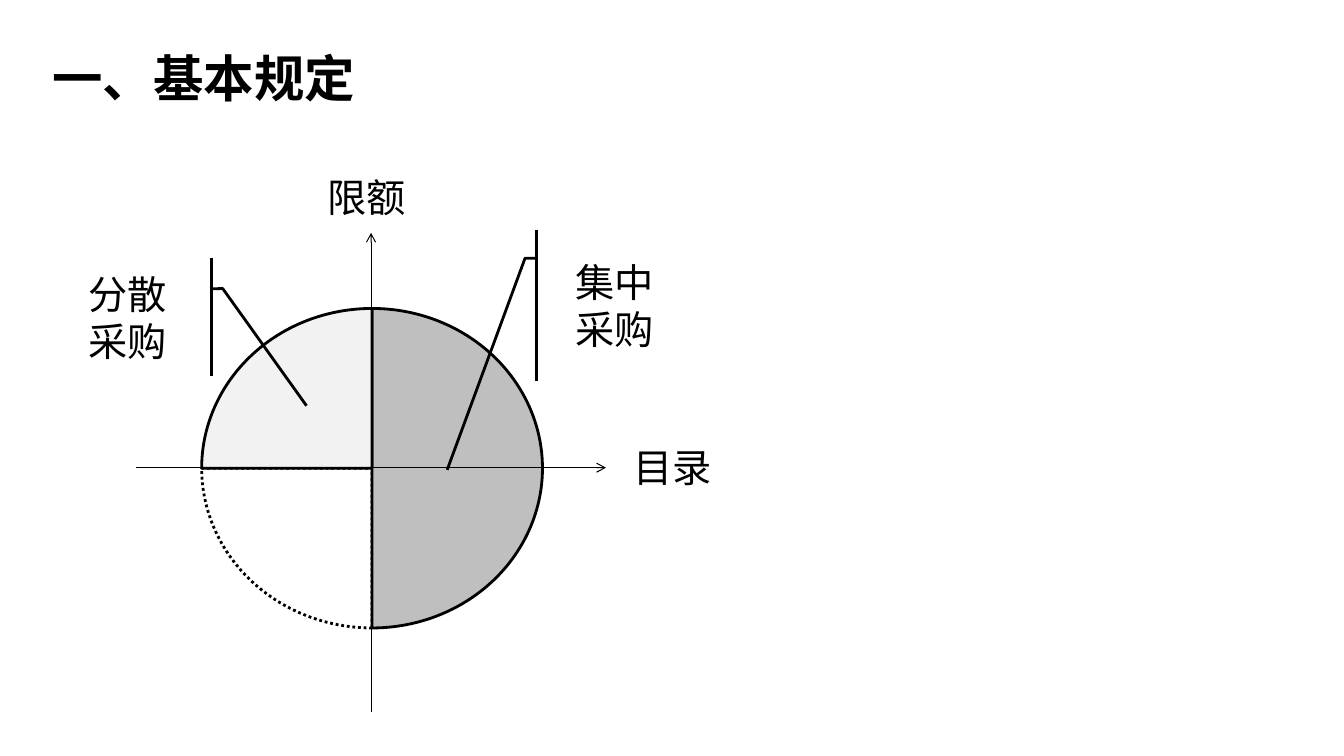
from lxml import etree
from pptx import Presentation
from pptx import util as u
from pptx.dml.color import RGBColor
from pptx.enum import dml, shapes, text
from pptx.oxml.ns import qn

FONT = "Noto Sans CJK SC"
BLACK = "000000"
TITLE = ("一、基本规定", (0.42, 0.42, 8.41, 1.1))
CIRCLE = (2, 3.06, 3.38, 3.17)
# start angle, end angle, fill, dash
LOWER = (270, 360, "FFFFFF", dml.MSO_LINE.ROUND_DOT)
RIGHT = (90, 270, "BFBFBF", None)
UPPER = (0, 90, "F2F2F2", None)
AXES = [(1.35, 4.64, 6.01, 4.64), (3.68, 7.06, 3.68, 2.31)]
LABELS = [("限额", (3.15, 1.67, 1.08, 0.57)), ("目录", (6.18, 4.35, 1.08, 0.57))]
NOTES = [
    ("集中采购", (5.43, 2.28, 1.33, 1.5), (0.188, -0.083, 0.188, -0.167, 1.588, -0.748)),
    ("分散采购", (0.6, 2.56, 1.33, 1.17), (0.262, 1.125, 0.259, 1.21, 1.253, 1.835)),
]


def color(code):
    return RGBColor.from_string(code)


def inches(box):
    return [u.Inches(v) for v in box]


def write(frame, words, size=28, bold=False, align=text.PP_ALIGN.LEFT,
          anchor=text.MSO_ANCHOR.TOP, wrap=True):
    frame.word_wrap = wrap
    frame.vertical_anchor = anchor
    para = frame.paragraphs[0]
    para.alignment = align
    run = para.add_run()
    run.text = words
    font = run.font
    font.size, font.bold, font.name = u.Pt(size), bold, FONT
    font.color.rgb = color(BLACK)
    etree.SubElement(run._r.get_or_add_rPr(), qn("a:ea"), typeface=FONT)


def draw(slide, kind, box, adjust, fill=None, dash=None):
    shape = slide.shapes.add_shape(kind, *inches(box))
    shape.shadow.inherit = False
    for i, value in enumerate(adjust):
        shape.adjustments[i] = value
    if fill:
        shape.fill.solid()
        shape.fill.fore_color.rgb = color(fill)
    else:
        shape.fill.background()
    shape.line.color.rgb = color(BLACK)
    shape.line.width = u.Pt(2)
    if dash:
        shape.line.dash_style = dash
    return shape


def sector(slide, start, end, fill, dash):
    # Angles are stored in 60000ths of a degree, adjustments in 100000ths
    adjust = (start * 0.6, min(end * 0.6, 215.999))
    draw(slide, shapes.MSO_SHAPE.PIE, CIRCLE, adjust, fill, dash).rotation = 180


def axis(slide, ends):
    line = slide.shapes.add_connector(shapes.MSO_CONNECTOR.STRAIGHT, *inches(ends))
    line.line.color.rgb = color(BLACK)
    line.line.width = u.Pt(0.75)
    etree.SubElement(line.line._get_or_add_ln(), qn("a:tailEnd"), type="arrow")
    etree.SubElement(line._element.spPr, qn("a:effectLst"))


def main():
    deck = Presentation()
    deck.slide_width, deck.slide_height = inches((13.33, 7.5))
    slide = deck.slides.add_slide(deck.slide_layouts[5])

    words, box = TITLE
    title = slide.shapes.title
    title.left, title.top, title.width, title.height = inches(box)
    write(title.text_frame, words, size=36, bold=True, align=text.PP_ALIGN.JUSTIFY)

    for part in (LOWER, RIGHT):
        sector(slide, *part)
    for ends in AXES:
        axis(slide, ends)
    sector(slide, *UPPER)

    for words, box in LABELS:
        label = slide.shapes.add_textbox(*inches(box))
        write(label.text_frame, words, wrap=False)
    for words, box, adjust in NOTES:
        note = draw(slide, shapes.MSO_SHAPE.LINE_CALLOUT_2_ACCENT_BAR, box, adjust)
        write(note.text_frame, words, align=text.PP_ALIGN.CENTER,
              anchor=text.MSO_ANCHOR.MIDDLE)

    deck.save("out.pptx")


if __name__ == "__main__":
    main()
